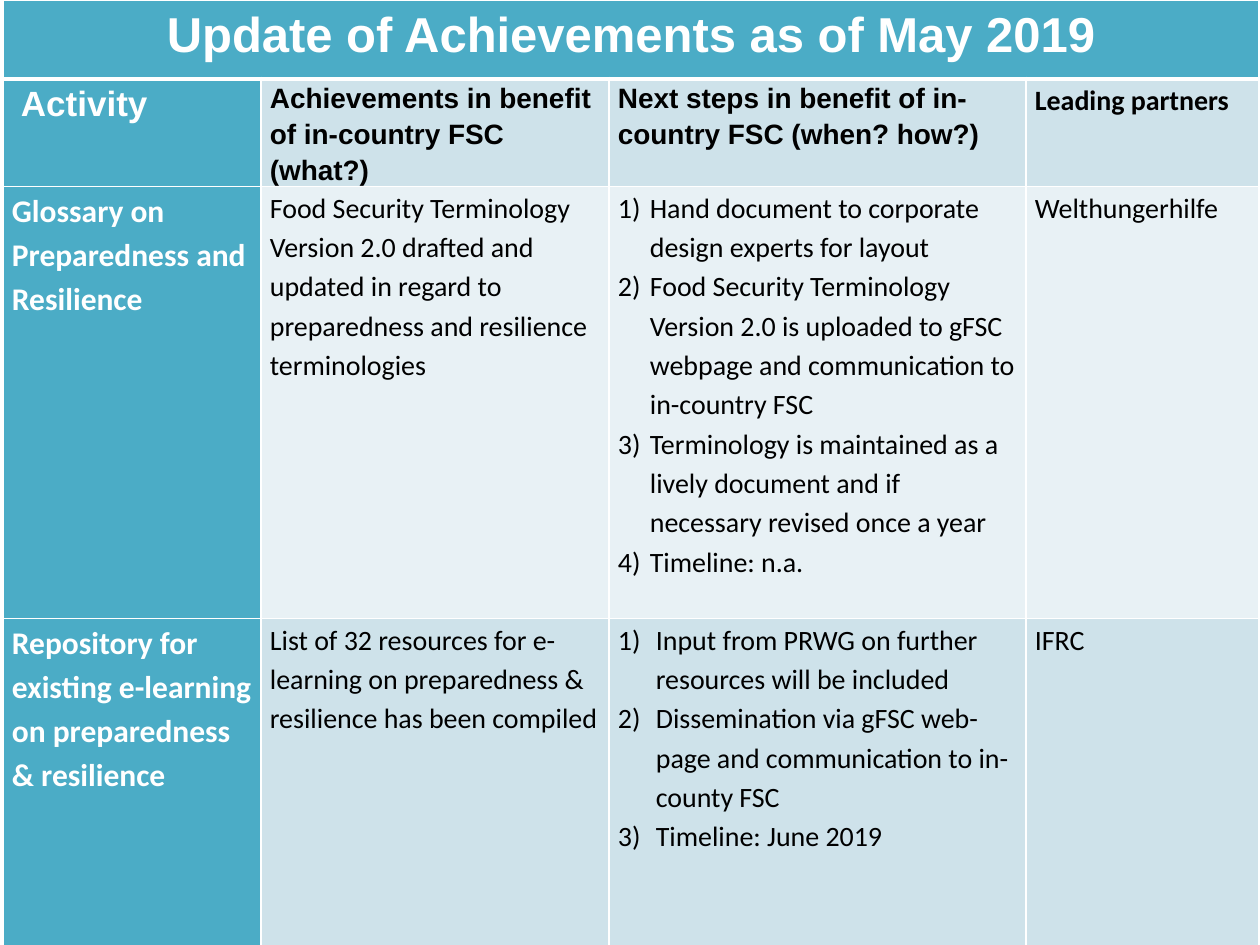
from dataclasses import dataclass

from lxml import etree
from pptx import Presentation
from pptx.dml.color import RGBColor
from pptx.enum.text import PP_ALIGN
from pptx.oxml.ns import qn
from pptx.util import Emu, Pt

CENTER, LEFT = PP_ALIGN.CENTER, PP_ALIGN.LEFT
PX = 914400 / 126
COLORS = {"teal": "4BACC6", "mid": "CEE2EA", "pale": "E8F1F5", "white": "FFFFFF", "black": "000000"}
COLUMNS = [258, 348, 417, 233]
ROWS = [79, 92, 432, 383]
INSET = 9

# Text formats by role
FORMATS = {
    "title": {"name": "Arial", "size": Pt(28), "bold": True, "color": "white"},
    "corner": {"name": "Arial", "size": Pt(20), "bold": True, "color": "white"},
    "heading": {"name": "Arial", "size": Pt(16), "bold": True, "color": "black"},
    "partner": {"name": "Calibri", "size": Pt(16), "bold": True, "color": "black"},
    "activity": {"name": "Calibri", "size": Pt(18), "bold": True, "color": "white"},
    "body": {"name": "Calibri", "size": Pt(16), "bold": False, "color": "black"},
}


@dataclass
class Entry:
    lines: list[str]
    role: str
    fill: str
    indent: int = 0
    numbered: bool = False
    align: int = LEFT


def px(length: int) -> Emu:
    return Emu(round(length * PX))


def activity_row(activity: str, achievement: str, steps: list[str], partner: str,
                 fill: str, indent: int) -> list[Entry]:
    return [
        Entry([activity], "activity", "teal"),
        Entry([achievement], "body", fill),
        Entry(steps, "body", fill, indent, numbered=True),
        Entry([partner], "body", fill),
    ]


GRID = [
    [Entry(["Update of Achievements as of May 2019"], "title", "teal", align=CENTER)]
    + [Entry([], "title", "teal") for _ in COLUMNS[1:]],
    [
        Entry(["Activity"], "corner", "teal", indent=9),
        Entry(["Achievements in benefit of in-country FSC (what?)"], "heading", "mid"),
        Entry(["Next steps in benefit of in-country FSC (when? how?)"], "heading", "mid"),
        Entry(["Leading partners"], "partner", "mid"),
    ],
    activity_row(
        "Glossary on Preparedness and Resilience",
        "Food Security Terminology Version 2.0 drafted and updated in regard to "
        "preparedness and resilience terminologies",
        ["Hand document to corporate design experts for layout",
         "Food Security Terminology Version 2.0 is uploaded to gFSC webpage and "
         "communication to in-country FSC",
         "Terminology is maintained as a lively document and if necessary revised once a year",
         "Timeline: n.a."],
        "Welthungerhilfe", "pale", 32),
    activity_row(
        "Repository for existing e-learning on preparedness & resilience",
        "List of 32 resources for e-learning on preparedness & resilience has been compiled",
        ["Input from PRWG on further resources will be included",
         "Dissemination via gFSC web-page and communication to in-county FSC",
         "Timeline: June 2019"],
        "IFRC", "mid", 38),
]


def add_color(parent, tag: str, color: str) -> None:
    holder = etree.SubElement(parent, qn(tag))
    etree.SubElement(holder, qn("a:srgbClr"), val=COLORS[color])


def add_borders(cell, widths: dict[str, int]) -> None:
    properties = cell._tc.get_or_add_tcPr()
    for side, width in widths.items():
        line = etree.SubElement(properties, qn(f"a:ln{side}"), w=str(Pt(width)))
        add_color(line, "a:solidFill", "white")


def write_paragraph(para, text: str, entry: Entry) -> None:
    properties = para._p.get_or_add_pPr()
    if entry.indent:
        properties.set("marL", str(px(entry.indent)))
    if entry.numbered:
        properties.set("indent", str(-px(entry.indent)))
        add_color(properties, "a:buClr", "black")
        etree.SubElement(properties, qn("a:buAutoNum"), type="arabicParenR")
    para.alignment = entry.align
    para.line_spacing = 1.15
    span = para.add_run()
    span.text = text
    for key, value in FORMATS[entry.role].items():
        if key == "color":
            span.font.color.rgb = RGBColor.from_string(COLORS[value])
        else:
            setattr(span.font, key, value)


def fill_cell(cell, entry: Entry, borders: dict[str, int]) -> None:
    margins = {"margin_left": INSET, "margin_right": INSET, "margin_top": 0, "margin_bottom": 0}
    for key, value in margins.items():
        setattr(cell, key, px(value))
    add_borders(cell, borders)
    cell.fill.solid()
    cell.fill.fore_color.rgb = RGBColor.from_string(COLORS[entry.fill])
    box = cell.text_frame
    for index, text in enumerate(entry.lines):
        para = box.add_paragraph() if index else box.paragraphs[0]
        write_paragraph(para, text, entry)


def main() -> None:
    deck = Presentation()
    deck.slide_width, deck.slide_height = px(1260), px(945)
    page = deck.slides.add_slide(deck.slide_layouts[6])

    # Table frame and grid sizes
    table = page.shapes.add_table(len(ROWS), len(COLUMNS), px(3), px(0),
                                  px(sum(COLUMNS)), px(sum(ROWS))).table
    table.first_row = table.horz_banding = False
    for column, width in zip(table.columns, COLUMNS):
        column.width = px(width)
    for row, height in zip(table.rows, ROWS):
        row.height = px(height)

    # Cells, with a heavier rule under the title
    for row_index, entries in enumerate(GRID):
        borders = {"L": 1, "R": 1, "T": 3 if row_index == 1 else 1, "B": 3 if row_index == 0 else 1}
        for column_index, entry in enumerate(entries):
            fill_cell(table.cell(row_index, column_index), entry, borders)
    table.cell(0, 0).merge(table.cell(0, len(COLUMNS) - 1))

    deck.save("out.pptx")


if __name__ == "__main__":
    main()
